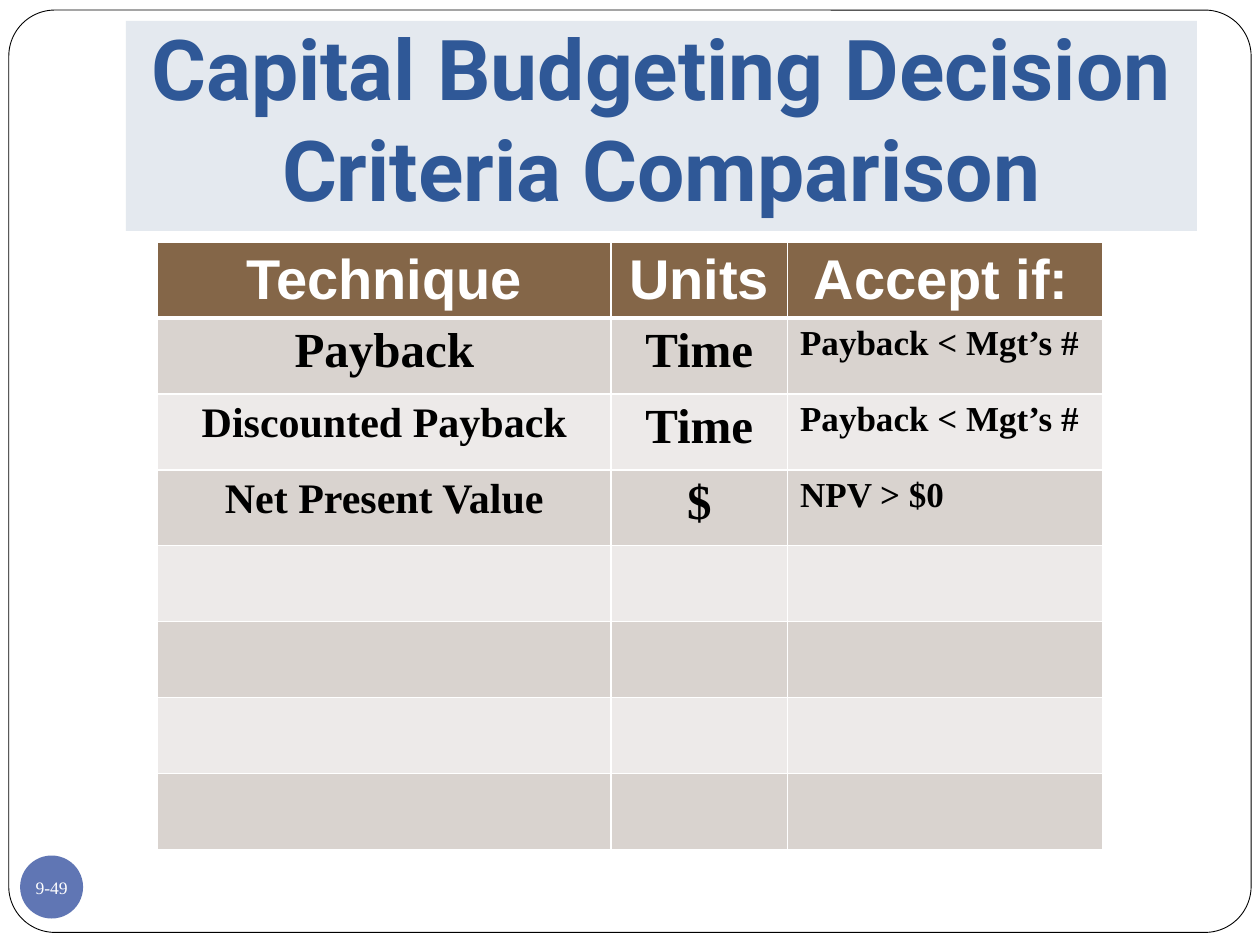
import lxml.etree
import pptx
import pptx.dml.color
import pptx.enum.shapes
import pptx.enum.text
import pptx.oxml.ns
import pptx.util

Pt = pptx.util.Pt
SHAPES = pptx.enum.shapes.MSO_SHAPE
ALIGN = pptx.enum.text.PP_ALIGN
ANCHOR = pptx.enum.text.MSO_ANCHOR
SERIF = "Times New Roman"

COLUMN_WIDTHS = (259.2, 100.8, 180)
ROW_HEIGHT = 43.4
ROW_COUNT = 8
HEADINGS = ("Technique", "Units", " Accept if:")
CRITERIA = (
    ("Payback", "Time", "Payback < Mgt’s #"),
    ("Discounted Payback", "Time", "Payback < Mgt’s #"),
    ("Net Present Value", "$", "NPV > $0"),
)
CRITERIA_SIZES = ((28, 28, 20), (24, 28, 20), (24, 28, 20))
COLUMN_ALIGNS = (ALIGN.CENTER, ALIGN.CENTER, ALIGN.LEFT)
BAND_FILLS = ("D9D3CF", "EDEAE9")


def color(value):
    return pptx.dml.color.RGBColor.from_string(value)


def paint(target, value):
    target.fill.solid()
    target.fill.fore_color.rgb = color(value)


def add_box(page, kind, left, top, width, height, fill, line=None):
    box = page.shapes.add_shape(kind, Pt(left), Pt(top), Pt(width), Pt(height))
    box.shadow.inherit = False
    paint(box, fill)
    if line:
        box.line.color.rgb = color(line)
        box.line.width = Pt(0.5)
    else:
        box.line.fill.background()
    return box


def set_frame(frame, anchor, margins, wrap):
    """Margins run left, top, right, bottom."""
    frame.word_wrap = wrap
    frame.vertical_anchor = anchor
    (frame.margin_left, frame.margin_top,
     frame.margin_right, frame.margin_bottom) = map(Pt, margins)


def write(frame, text, size, font, value, bold=False, align=ALIGN.CENTER):
    para = frame.paragraphs[0]
    para.alignment = align
    span = para.add_run()
    span.text = text
    span.font.size = Pt(size)
    span.font.name = font
    span.font.bold = bold
    span.font.color.rgb = color(value)


def set_borders(cell, top, bottom):
    """White rules: 1 pt at the sides, given widths above and below."""
    qn = pptx.oxml.ns.qn
    properties = cell._tc.get_or_add_tcPr()
    sides = (("lnL", 1), ("lnR", 1), ("lnT", top), ("lnB", bottom))
    for index, (side, width) in enumerate(sides):
        border = lxml.etree.Element(qn(f"a:{side}"), w=str(int(Pt(width))))
        fill = lxml.etree.SubElement(border, qn("a:solidFill"))
        lxml.etree.SubElement(fill, qn("a:srgbClr"), val="FFFFFF")
        properties.insert(index, border)


def add_criteria_table(page):
    table = page.shapes.add_table(
        ROW_COUNT, len(COLUMN_WIDTHS), Pt(90), Pt(138.24),
        Pt(sum(COLUMN_WIDTHS)), Pt(ROW_HEIGHT * ROW_COUNT)).table
    for column, width in zip(table.columns, COLUMN_WIDTHS):
        column.width = Pt(width)
    for r, row in enumerate(table.rows):
        row.height = Pt(ROW_HEIGHT)
        for cell in row.cells:
            paint(cell, BAND_FILLS[(r - 1) % 2] if r else "846648")
            set_borders(cell, 3 if r == 1 else 1, 3 if r == 0 else 1)
    for c, (heading, align) in enumerate(zip(HEADINGS, COLUMN_ALIGNS)):
        write(table.cell(0, c).text_frame, heading, 32, "Arial", "FFFFFF",
              True, align)
        for r, (texts, sizes) in enumerate(zip(CRITERIA, CRITERIA_SIZES), 1):
            write(table.cell(r, c).text_frame, texts[c], sizes[c], SERIF,
                  "000000", True, align)


def add_title(page):
    title = add_box(page, SHAPES.RECTANGLE, 72, 12, 612, 120, "E4E9EF")
    set_frame(title.text_frame, ANCHOR.BOTTOM, (7.2, 3.6, 7.2, 7.2), True)
    write(title.text_frame, "Capital Budgeting Decision Criteria Comparison",
          48, "Roboto", "2F5897", True)


def add_page_number(page):
    badge = add_box(page, SHAPES.OVAL, 11.52, 488.88, 36, 36, "6076B4")
    set_frame(badge.text_frame, ANCHOR.MIDDLE, (0, 0, 0, 0), False)
    write(badge.text_frame, "9-49", 10, SERIF, "FFFFFF")


def main():
    deck = pptx.Presentation()
    deck.slide_width, deck.slide_height = Pt(720), Pt(540)
    page = deck.slides.add_slide(deck.slide_layouts[6])
    border = add_box(page, SHAPES.ROUNDED_RECTANGLE, 5.04, 5.76, 709.92,
                     527.04, "FFFFFF", "000000")
    border.adjustments[0] = 0.05
    add_page_number(page)
    add_title(page)
    add_criteria_table(page)
    deck.save("out.pptx")


if __name__ == "__main__":
    main()
